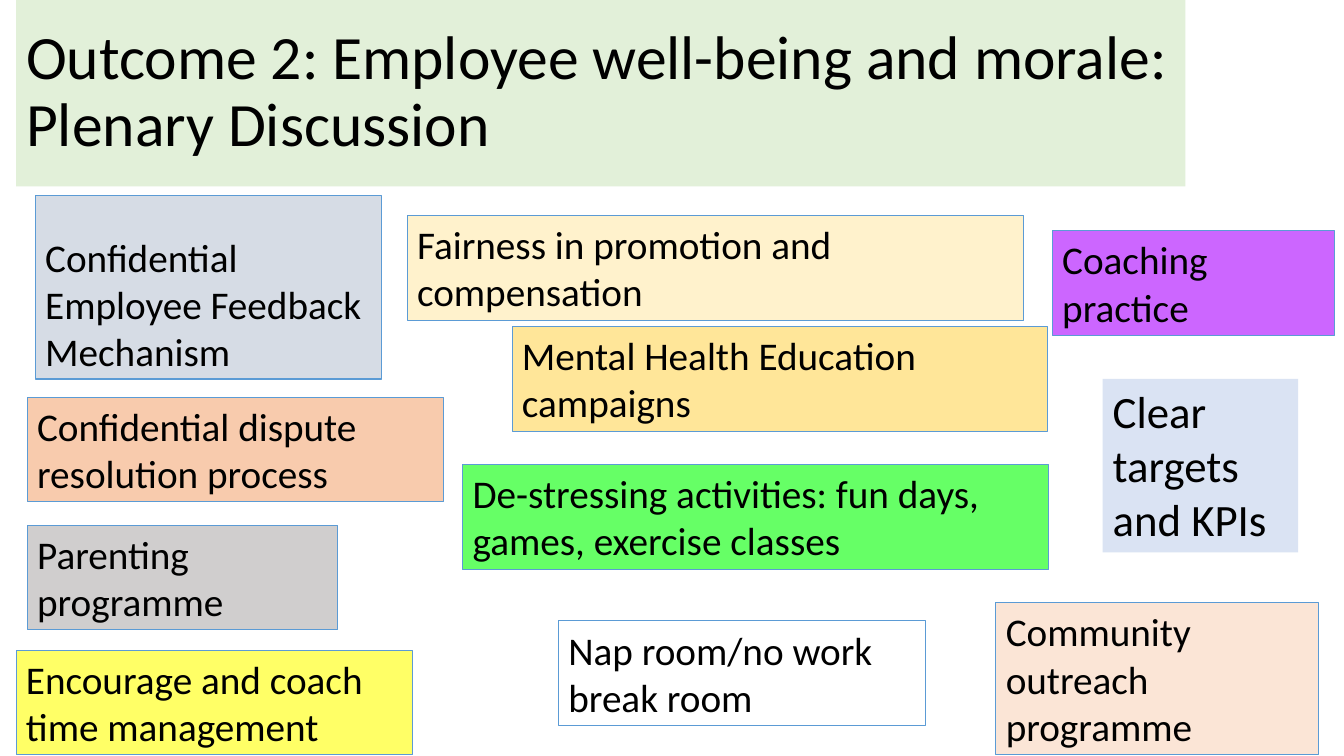
"""Build the plenary discussion slide on employee well-being and morale."""
from dataclasses import dataclass
from typing import Optional

from pptx import Presentation
from pptx import util as u
from pptx.dml.color import RGBColor
from pptx.enum import text

SLIDE_WIDTH, SLIDE_HEIGHT = u.Inches(13.333), u.Inches(7.5)
FONT_NAME = "Calibri"
TWO_LINES, THREE_LINES = 13.87, 20.13

BLACK = RGBColor(0x00, 0x00, 0x00)
OUTLINE_BLUE = RGBColor(0x5B, 0x9B, 0xD5)
PALE_GREEN = RGBColor(0xE2, 0xF0, 0xD9)
BLUE_GREY = RGBColor(0xD6, 0xDC, 0xE5)
CREAM = RGBColor(0xFF, 0xF2, 0xCC)
PURPLE = RGBColor(0xCC, 0x66, 0xFF)
ORANGE = RGBColor(0xF8, 0xCB, 0xAD)
GOLD = RGBColor(0xFF, 0xE6, 0x99)
GREY = RGBColor(0xD0, 0xCE, 0xCE)
GREEN = RGBColor(0x66, 0xFF, 0x66)
YELLOW = RGBColor(0xFF, 0xFF, 0x66)
PEACH = RGBColor(0xFB, 0xE5, 0xD6)
PALE_BLUE = RGBColor(0xDA, 0xE3, 0xF3)


@dataclass(frozen=True)
class Idea:
    """A suggestion box, placed in percent of the slide's width and height."""

    wording: str
    left: float
    top: float
    width: float
    height: float = TWO_LINES
    fill: Optional[RGBColor] = None
    outlined: bool = True
    size: int = 28
    anchor: text.MSO_ANCHOR = text.MSO_ANCHOR.TOP


TITLE = Idea("Outcome 2: Employee well-being and morale: Plenary Discussion",
             1.2, 0, 87, 24.67, PALE_GREEN, False, 44, text.MSO_ANCHOR.MIDDLE)

IDEAS = [
    Idea("Confidential Employee Feedback Mechanism", 2.63, 25.87, 25.73, 24.27,
         BLUE_GREY, anchor=text.MSO_ANCHOR.BOTTOM),
    Idea("Fairness in promotion and compensation", 30.3, 28.53, 45.83, fill=CREAM),
    Idea("Coaching practice", 78.3, 30.53, 21, fill=PURPLE),
    Idea("Confidential dispute resolution process", 2.03, 52.53, 30.98, fill=ORANGE),
    Idea("Mental Health Education campaigns", 38.1, 43.2, 39.83, fill=GOLD),
    Idea("Parenting programme", 2.03, 69.47, 23.1, fill=GREY),
    Idea("De-stressing activities: fun days, games, exercise classes",
         34.43, 61.47, 43.58, fill=GREEN),
    Idea("Encourage and coach time management", 1.2, 86, 29.48, fill=YELLOW),
    Idea("Nap room/no work break room", 41.55, 82.13, 27.3),
    Idea("Community outreach programme", 74.1, 79.73, 24, THREE_LINES, PEACH),
    Idea("Clear targets and KPIs", 82.05, 50.13, 14.55, 22.93, PALE_BLUE, False, 32),
]


def across(percent: float) -> int:
    """Turn a percentage of the slide's width into a length."""
    return round(SLIDE_WIDTH * percent / 100)


def down(percent: float) -> int:
    """Turn a percentage of the slide's height into a length."""
    return round(SLIDE_HEIGHT * percent / 100)


def format_shape(shape, idea: Idea) -> None:
    """Place a text shape and give it the wording and look of an idea."""
    shape.left, shape.top = across(idea.left), down(idea.top)
    shape.width, shape.height = across(idea.width), down(idea.height)
    if idea.fill is not None:
        shape.fill.solid()
        shape.fill.fore_color.rgb = idea.fill
    if idea.outlined:
        shape.line.color.rgb = OUTLINE_BLUE
        shape.line.width = u.Pt(0.75)
    frame = shape.text_frame
    frame.word_wrap = True
    frame.auto_size = text.MSO_AUTO_SIZE.NONE
    frame.vertical_anchor = idea.anchor
    frame.text = idea.wording
    paragraph = frame.paragraphs[0]
    paragraph.alignment = text.PP_ALIGN.LEFT
    font = paragraph.runs[0].font
    font.name, font.size = FONT_NAME, u.Pt(idea.size)
    font.color.rgb = BLACK


def main() -> None:
    """Create the slide and save it."""
    presentation = Presentation()
    presentation.slide_width, presentation.slide_height = SLIDE_WIDTH, SLIDE_HEIGHT
    slide = presentation.slides.add_slide(presentation.slide_layouts[5])
    title = slide.shapes.title
    format_shape(title, TITLE)
    title.text_frame.paragraphs[0].line_spacing = 0.9
    for idea in IDEAS:
        format_shape(slide.shapes.add_textbox(0, 0, 0, 0), idea)
    presentation.save("out.pptx")


if __name__ == "__main__":
    main()
